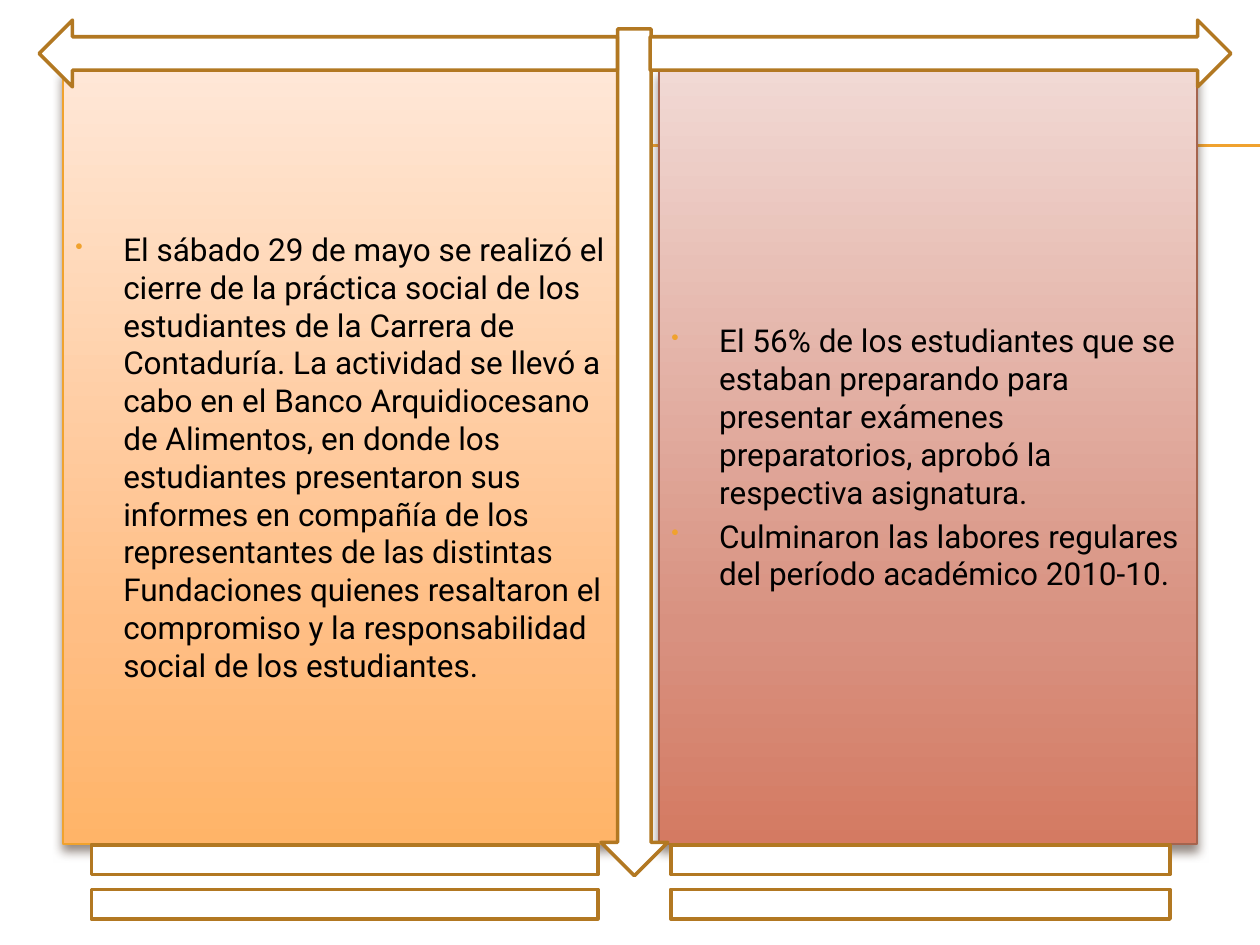
from copy import deepcopy

from lxml import etree
from pptx import Presentation
from pptx.dml.color import RGBColor
from pptx.enum.shapes import MSO_CONNECTOR, MSO_SHAPE
from pptx.enum.text import MSO_ANCHOR, PP_ALIGN
from pptx.oxml import parse_xml
from pptx.oxml.ns import nsdecls, qn
from pptx.util import Inches, Pt

RECTANGLE = MSO_SHAPE.RECTANGLE
DOWN, RIGHT, LEFT = MSO_SHAPE.DOWN_ARROW, MSO_SHAPE.RIGHT_ARROW, MSO_SHAPE.LEFT_ARROW
EQUAL = MSO_SHAPE.MATH_EQUAL
STRAIGHT = MSO_CONNECTOR.STRAIGHT

WIDTH, HEIGHT = 10, 7.5
ACCENT, FRAME = "F0A22E", "B27822"
FONT, SIZE = "Roboto", 18
INDENT = 0.38
PANEL_TOP, PANEL_HEIGHT = 0.55, 6.15
ARROW_TOP, ARROW_THICKNESS = 0.16, 0.53
EQUAL_TOP = 6.5
GRADIENT_POSITIONS = (0, 0.72, 1)

PANELS = [
    {"left": 0.5, "width": 4.42, "edge": "F0A22E",
     "gradient": ("FFE7D7", "FFBE84", "FFB468"),
     "news": ["El sábado 29 de mayo se realizó el cierre de la práctica social de los "
              "estudiantes de la Carrera de Contaduría. La actividad se llevó a cabo en el "
              "Banco Arquidiocesano de Alimentos, en donde los estudiantes presentaron sus "
              "informes en compañía de los representantes de las distintas Fundaciones "
              "quienes resaltaron el compromiso y la responsabilidad social de los "
              "estudiantes."]},
    {"left": 5.23, "width": 4.27, "edge": "A5644E",
     "gradient": ("F1D9D4", "D89180", "D47A62"),
     "news": ["El 56% de los estudiantes que se estaban preparando para presentar exámenes "
              "preparatorios, aprobó la respectiva asignatura.",
              "Culminaron las labores regulares del período académico 2010-10."]},
]

ORNAMENTS = [
    (DOWN, 4.77, 0.23, ARROW_THICKNESS, 6.72),
    (RIGHT, 5.16, ARROW_TOP, 4.61, ARROW_THICKNESS),
    (LEFT, 0.31, ARROW_TOP, 4.59, ARROW_THICKNESS),
    (EQUAL, 0, EQUAL_TOP, 5.47, HEIGHT - EQUAL_TOP),
    (EQUAL, 4.61, EQUAL_TOP, WIDTH - 4.61, HEIGHT - EQUAL_TOP),
]


def color(value):
    return RGBColor.from_string(value)


def add_outlined(slide, kind, left, top, width, height, edge, weight):
    shape = slide.shapes.add_shape(
        kind, Inches(left), Inches(top), Inches(width), Inches(height))
    shape.shadow.inherit = False
    shape.line.color.rgb = color(edge)
    shape.line.width = Pt(weight)
    return shape


def add_rule(slide, y):
    rule = slide.shapes.add_connector(
        STRAIGHT, Inches(0.56), Inches(y), Inches(WIDTH), Inches(y))
    rule.line.color.rgb = color(ACCENT)
    rule.line.width = Pt(0.75)
    etree.SubElement(rule._element.spPr, qn("a:effectLst"))


def fill_gradient(shape, colors):
    shape.fill.gradient()
    shape.fill.gradient_angle = 270
    stop_list = shape._element.spPr.find(".//" + qn("a:gsLst"))
    stop_list.append(deepcopy(stop_list[-1]))
    for stop, position, value in zip(shape.fill.gradient_stops, GRADIENT_POSITIONS, colors):
        stop.position = position
        stop.color.rgb = color(value)


def drop_shadow(shape):
    shape._element.spPr.find(qn("a:effectLst")).append(parse_xml(
        f'<a:outerShdw {nsdecls("a")} blurRad="{Pt(6)}" dist="{Pt(4)}" dir="5400000" '
        'rotWithShape="0"><a:srgbClr val="4E3B30"><a:alpha val="60000"/></a:srgbClr>'
        '</a:outerShdw>'))


def add_bullet(paragraph):
    properties = paragraph._p.get_or_add_pPr()
    properties.set("marL", str(Inches(INDENT)))
    properties.set("indent", str(-Inches(INDENT)))
    for xml in (f'<a:buClr {nsdecls("a")}><a:srgbClr val="{ACCENT}"/></a:buClr>',
                f'<a:buSzPct {nsdecls("a")} val="70000"/>',
                f'<a:buChar {nsdecls("a")} char="•"/>'):
        properties.append(parse_xml(xml))


def write_news(frame, news):
    frame.word_wrap = True
    frame.vertical_anchor = MSO_ANCHOR.MIDDLE
    for index, item in enumerate(news):
        paragraph = frame.add_paragraph() if index else frame.paragraphs[0]
        paragraph.text = item
        add_bullet(paragraph)
        paragraph.alignment = PP_ALIGN.LEFT
        if index:
            paragraph.space_before = Pt(0.2 * SIZE)
        paragraph.font.name = FONT
        paragraph.font.size = Pt(SIZE)
        paragraph.font.color.rgb = color("000000")


def main():
    deck = Presentation()
    deck.slide_width, deck.slide_height = Inches(WIDTH), Inches(HEIGHT)
    slide = deck.slides.add_slide(deck.slide_layouts[6])

    for y in (1.15, 1.16):
        add_rule(slide, y)

    for panel in PANELS:
        card = add_outlined(slide, RECTANGLE, panel["left"], PANEL_TOP,
                            panel["width"], PANEL_HEIGHT, panel["edge"], 0.79)
        fill_gradient(card, panel["gradient"])
        drop_shadow(card)
        write_news(card.text_frame, panel["news"])

    for kind, left, top, width, height in ORNAMENTS:
        ornament = add_outlined(slide, kind, left, top, width, height, FRAME, 2)
        ornament.fill.solid()
        ornament.fill.fore_color.rgb = color("FFFFFF")

    deck.save("out.pptx")


if __name__ == "__main__":
    main()
